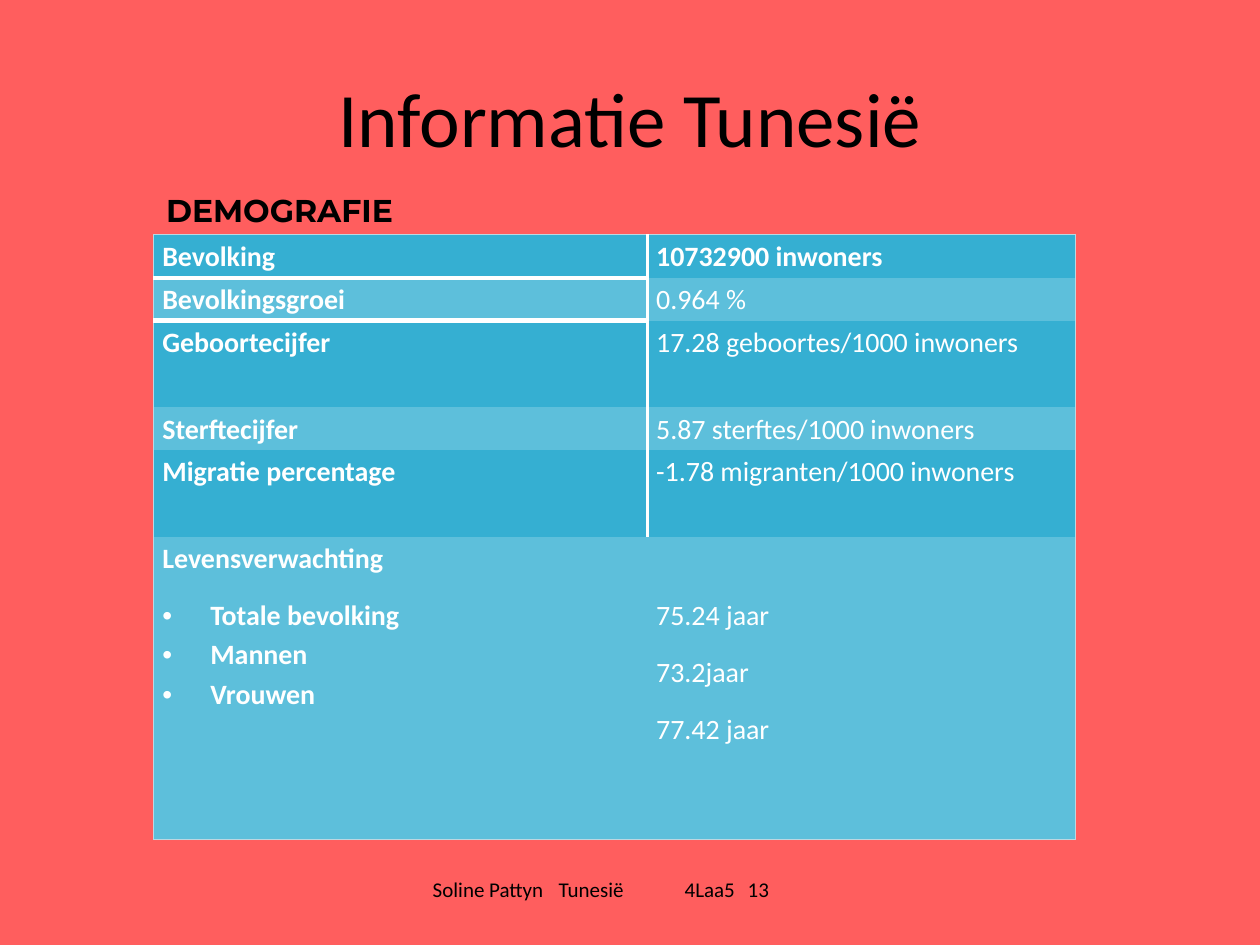
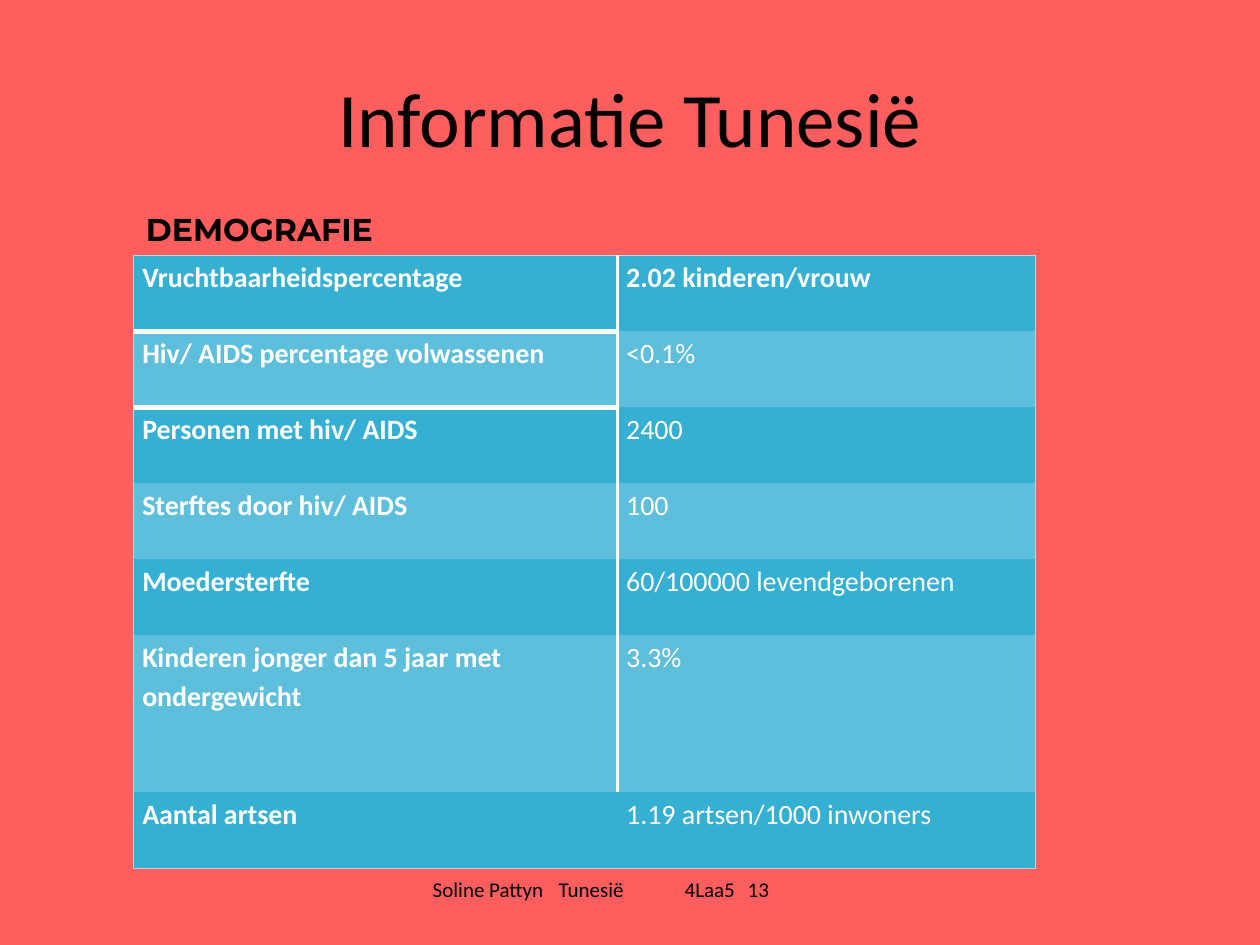
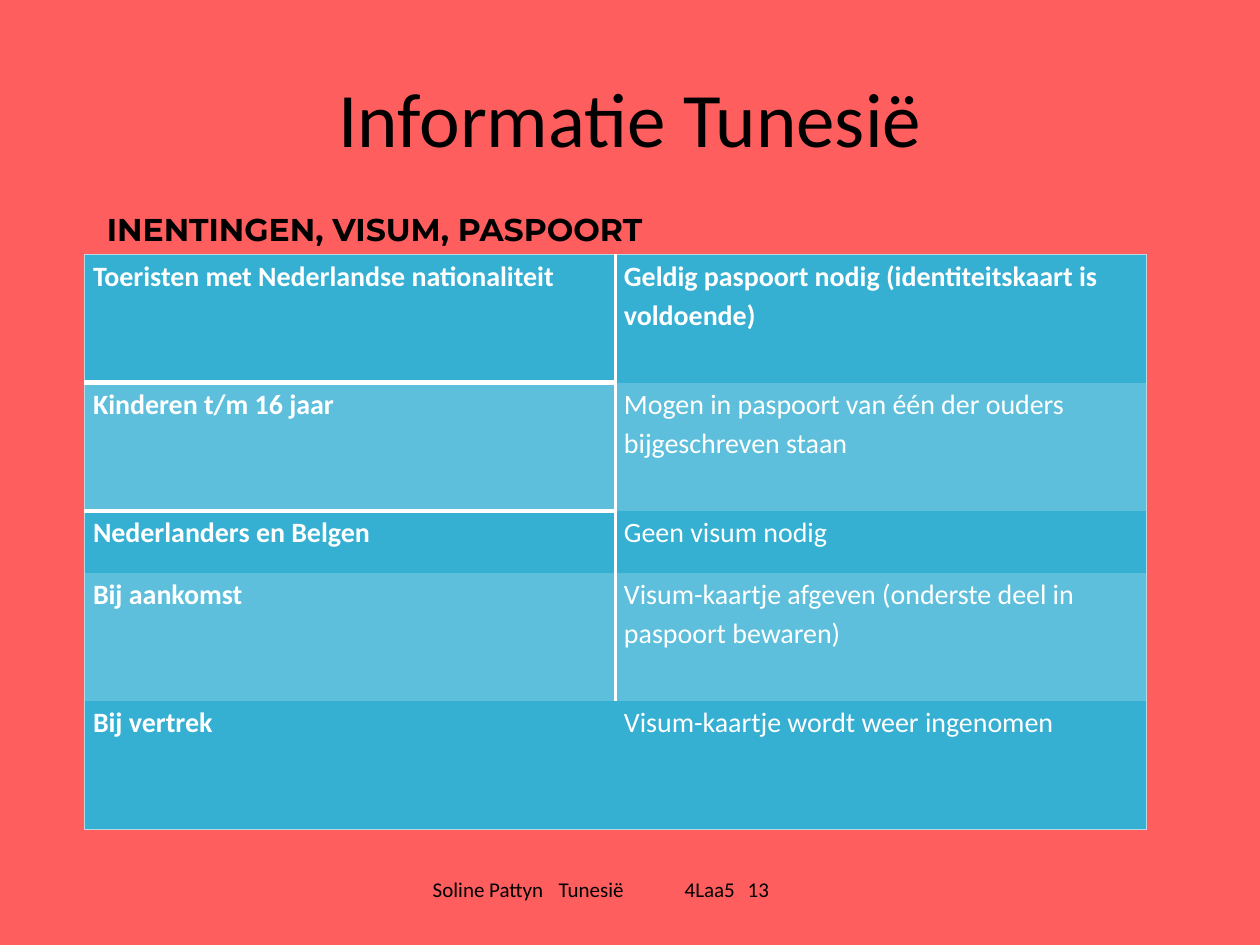
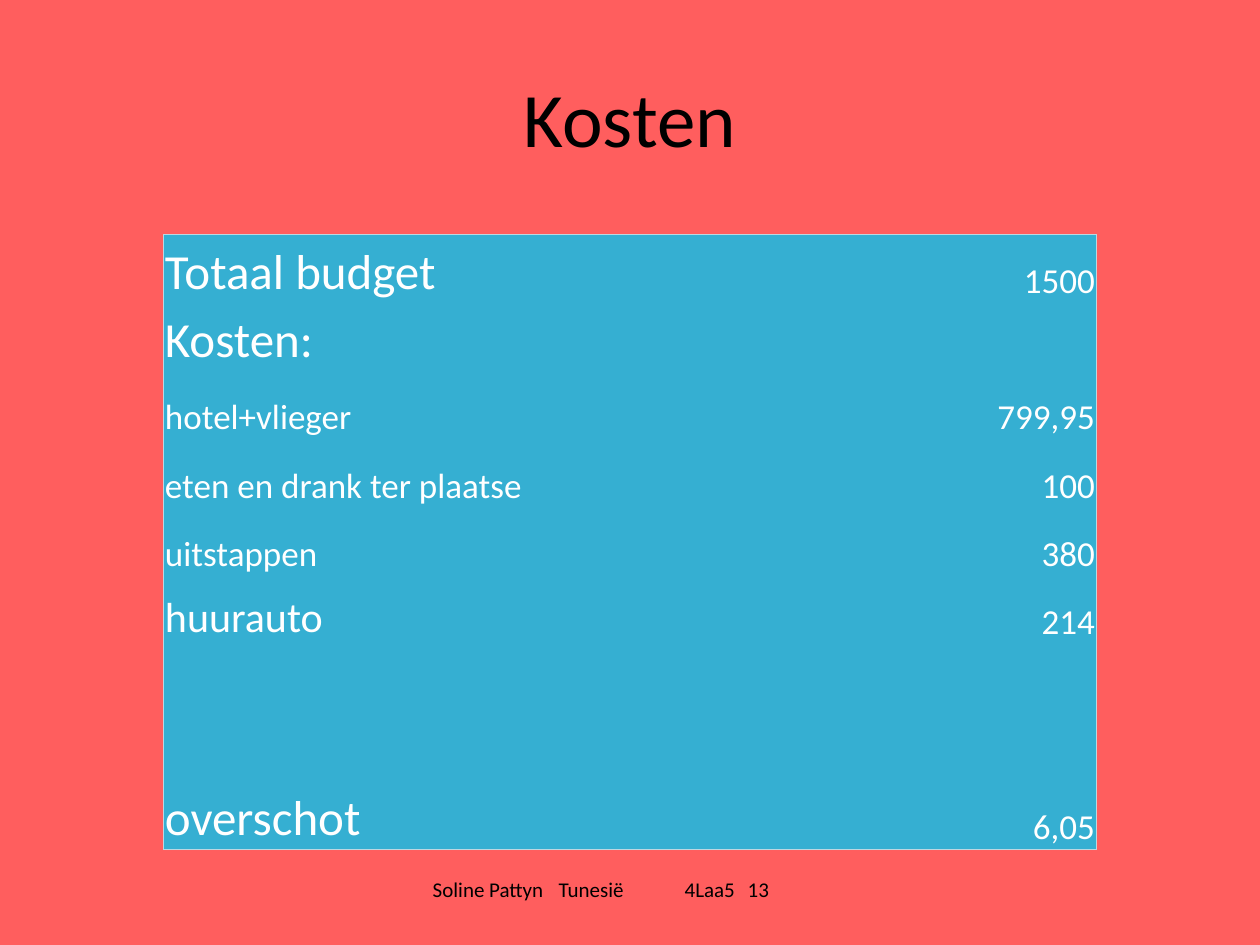
from lxml import etree
from pptx import Presentation
from pptx.dml.color import RGBColor
from pptx.enum.text import MSO_ANCHOR, PP_ALIGN
from pptx.oxml.ns import qn
from pptx.util import Pt

LEFT, CENTER, RIGHT = PP_ALIGN.LEFT, PP_ALIGN.CENTER, PP_ALIGN.RIGHT
TOP, MIDDLE, BOTTOM = MSO_ANCHOR.TOP, MSO_ANCHOR.MIDDLE, MSO_ANCHOR.BOTTOM

COLORS = {
    "background": "FF5E5E",
    "row": "35AFD2",
    "band": "5DBFDB",
    "frame": "BCD7E1",
    "white": "FFFFFF",
    "black": "000000",
}
BODY_FONT, HEADING_FONT = "Calibri", "Montserrat"
PLAIN_TABLE_STYLE = "{2D5ABB26-0587-4C30-8999-92F81FD0307C}"

FRAME = ("frame", 0.75)
COLUMN_RULE = ("white", 2)
HEADER_RULE = ("white", 3)

FOOTER_PARTS = ["Soline Pattyn", "Tunesië", "4Laa5", "13"]
FOOTER_INDENT, FOOTER_TABS = 73.2, (163.5, 227.5, 297.2)

POPULATION = [
    ("Bevolking", "10732900 inwoners"),
    ("Bevolkingsgroei", "0.964 %"),
    ("Geboortecijfer", "17.28 geboortes/1000 inwoners"),
    ("Sterftecijfer", "5.87 sterftes/1000 inwoners"),
    ("Migratie percentage", "-1.78 migranten/1000 inwoners"),
    ("Levensverwachting\n• Totale bevolking\n• Mannen\n• Vrouwen",
     "75.24 jaar\n73.2jaar\n77.42 jaar"),
]
HEALTH = [
    ("Vruchtbaarheidspercentage", "2.02 kinderen/vrouw"),
    ("Hiv/ AIDS percentage volwassenen", "<0.1%"),
    ("Personen met hiv/ AIDS", "2400"),
    ("Sterftes door hiv/ AIDS", "100"),
    ("Moedersterfte", "60/100000 levendgeborenen"),
    ("Kinderen jonger dan 5 jaar met ondergewicht", "3.3%"),
    ("Aantal artsen", "1.19 artsen/1000 inwoners"),
]
TRAVEL_PAPERS = [
    ("Toeristen met Nederlandse nationaliteit",
     "Geldig paspoort nodig (identiteitskaart is voldoende)"),
    ("Kinderen t/m 16 jaar",
     "Mogen in paspoort van één der ouders bijgeschreven staan"),
    ("Nederlanders en Belgen", "Geen visum nodig"),
    ("Bij aankomst",
     "Visum-kaartje afgeven (onderste deel in paspoort bewaren)"),
    ("Bij vertrek", "Visum-kaartje wordt weer ingenomen"),
]
# Label, amount, label size
COSTS = [
    ("Totaal budget", "1500", 28),
    ("Kosten:", "", 28),
    ("hotel+vlieger", "799,95", 20),
    ("eten en drank ter plaatse", "100", 20),
    ("uitstappen", "380", 20),
    ("huurauto", "214", 24),
    ("", "", 20),
    ("", "", 20),
    ("overschot", "6,05", 28),
]


def rgb(name):
    return RGBColor.from_string(COLORS[name])


def add_bullet(paragraph, indent=27.4):
    properties = paragraph._p.get_or_add_pPr()
    properties.set("marL", str(Pt(indent)))
    properties.set("indent", str(-Pt(indent)))
    etree.SubElement(properties, qn("a:buFont"), typeface="Arial")
    etree.SubElement(properties, qn("a:buChar"), char="•")


def write_text(frame, text, size=16, font=BODY_FONT, color="white", bold=False,
               align=LEFT, line_spacing=None, space_after=0):
    """Write one paragraph per line; a line that starts with • is a list item."""
    lines = text.split("\n")
    for number, line in enumerate(lines):
        paragraph = frame.paragraphs[0] if number == 0 else frame.add_paragraph()
        paragraph.alignment = align
        if line_spacing:
            paragraph.line_spacing = line_spacing
        is_item = line.startswith("• ")
        next_is_item = is_item and number + 1 < len(lines)
        paragraph.space_after = Pt(0 if next_is_item else space_after)
        if is_item:
            add_bullet(paragraph)
        run = paragraph.add_run()
        run.text = line.removeprefix("• ")
        run.font.size, run.font.name, run.font.bold = Pt(size), font, bold
        run.font.color.rgb = rgb(color)


def add_text(slide, text, left, top, width, height, anchor=TOP, **text_format):
    box = slide.shapes.add_textbox(Pt(left), Pt(top), Pt(width), Pt(height))
    frame = box.text_frame
    frame.word_wrap = True
    frame.vertical_anchor = anchor
    write_text(frame, text, **text_format)
    return frame


def add_footer(slide):
    frame = add_text(slide, "\t".join(FOOTER_PARTS), 167, 485.3, 397.4, 45.4,
                     anchor=MIDDLE, size=12, color="black")
    properties = frame.paragraphs[0]._p.get_or_add_pPr()
    properties.set("marL", str(Pt(FOOTER_INDENT)))
    properties.set("indent", "0")
    tab_list = etree.SubElement(properties, qn("a:tabLst"))
    for position in FOOTER_TABS:
        etree.SubElement(tab_list, qn("a:tab"), pos=str(Pt(position)), algn="l")


def new_slide(prs, title):
    slide = prs.slides.add_slide(prs.slide_layouts[6])
    slide.background.fill.solid()
    slide.background.fill.fore_color.rgb = rgb("background")
    add_text(slide, title, 36, 21.6, 648, 90, anchor=MIDDLE, size=44,
             color="black", align=CENTER)
    add_footer(slide)
    return slide


def add_heading(slide, text, left, top, width):
    add_text(slide, text, left, top, width, 28.8, size=18, font=HEADING_FONT,
             color="black", bold=True)


def add_plain_table(slide, left, top, columns, heights):
    frame = slide.shapes.add_table(len(heights), len(columns), Pt(left), Pt(top),
                                   Pt(sum(columns)), Pt(sum(heights)))
    table = frame.table
    table.first_row = table.horz_banding = False
    frame.element.find(".//" + qn("a:tableStyleId")).text = PLAIN_TABLE_STYLE
    for column, width in zip(table.columns, columns):
        column.width = Pt(width)
    for row, height in zip(table.rows, heights):
        row.height = Pt(height)
    return table


def set_borders(cell, borders):
    properties = cell._tc.get_or_add_tcPr()
    for side in "LRTB":
        if borders.get(side):
            color, width = borders[side]
            line = etree.SubElement(properties, qn("a:ln" + side), w=str(Pt(width)))
            fill = etree.SubElement(line, qn("a:solidFill"))
            etree.SubElement(fill, qn("a:srgbClr"), val=COLORS[color])


def style_cell(cell, fill, borders, side_margin, top_margin=0, anchor=TOP):
    set_borders(cell, borders)
    cell.fill.solid()
    cell.fill.fore_color.rgb = rgb(fill)
    cell.margin_left = cell.margin_right = Pt(side_margin)
    cell.margin_top, cell.margin_bottom = Pt(top_margin), 0
    cell.vertical_anchor = anchor


def frame_borders(row, column, last_row):
    return {
        "L": FRAME if column == 0 else None,
        "R": FRAME if column == 1 else None,
        "T": FRAME if row == 0 else None,
        "B": FRAME if row == last_row else None,
    }


def add_fact_table(slide, facts, left, top, columns, heights, last_value_drop=0):
    """Banded facts: bold labels on the left, values on the right."""
    table = add_plain_table(slide, left, top, columns, heights)
    last = len(facts) - 1
    for r, fact in enumerate(facts):
        for c, text in enumerate(fact):
            borders = frame_borders(r, c, last)
            # The column rule stops above the last row
            if r < last:
                borders["R" if c == 0 else "L"] = COLUMN_RULE
            # The header rule runs under the first label only
            if c == 0 and r < 2:
                borders["B" if r == 0 else "T"] = HEADER_RULE
            cell = table.cell(r, c)
            drop = last_value_drop if (r, c) == (last, 1) else 0
            style_cell(cell, "band" if r % 2 else "row", borders, 5, drop)
            write_text(cell.text_frame, text, bold=r == 0 or c == 0,
                       line_spacing=1.15, space_after=10)


def add_cost_table(slide, costs, left, top, columns, row_height):
    table = add_plain_table(slide, left, top, columns, [row_height] * len(costs))
    for r, (label, amount, label_size) in enumerate(costs):
        entries = [(label, label_size, LEFT), (amount, 20, RIGHT)]
        for c, (text, size, align) in enumerate(entries):
            cell = table.cell(r, c)
            style_cell(cell, "row", frame_borders(r, c, len(costs) - 1),
                       0.7, 0.7, BOTTOM)
            if text:
                write_text(cell.text_frame, text, size=size, align=align)


def main():
    prs = Presentation()
    prs.slide_width, prs.slide_height = Pt(720), Pt(540)

    # Population
    slide = new_slide(prs, "Informatie Tunesië")
    add_fact_table(slide, POPULATION, 87.8, 133.9, [282.2, 244.8],
                   [25, 24.4, 49.6, 24.4, 49.6, 172.8], last_value_drop=32.5)
    add_heading(slide, "DEMOGRAFIE", 87.8, 105.8, 164.2)

    # Health
    slide = new_slide(prs, "Informatie Tunesië")
    add_heading(slide, "DEMOGRAFIE", 76.3, 116.6, 164.2)
    add_fact_table(slide, HEALTH, 76.3, 146, [276.5, 239],
                   [43.4] * 5 + [89.8, 43.4])

    # Travel papers
    slide = new_slide(prs, "Informatie Tunesië")
    add_fact_table(slide, TRAVEL_PAPERS, 48.2, 145.4, [303.4, 303.4],
                   [73.3, 73.3, 35.4, 73.3, 73.3])
    add_heading(slide, "INENTINGEN, VISUM, PASPOORT", 54, 116.6, 419.8)

    # Costs
    slide = new_slide(prs, "Kosten")
    add_cost_table(slide, COSTS, 93.6, 133.9, [405.4, 127.4], 39.05)

    prs.save("out.pptx")


if __name__ == "__main__":
    main()
